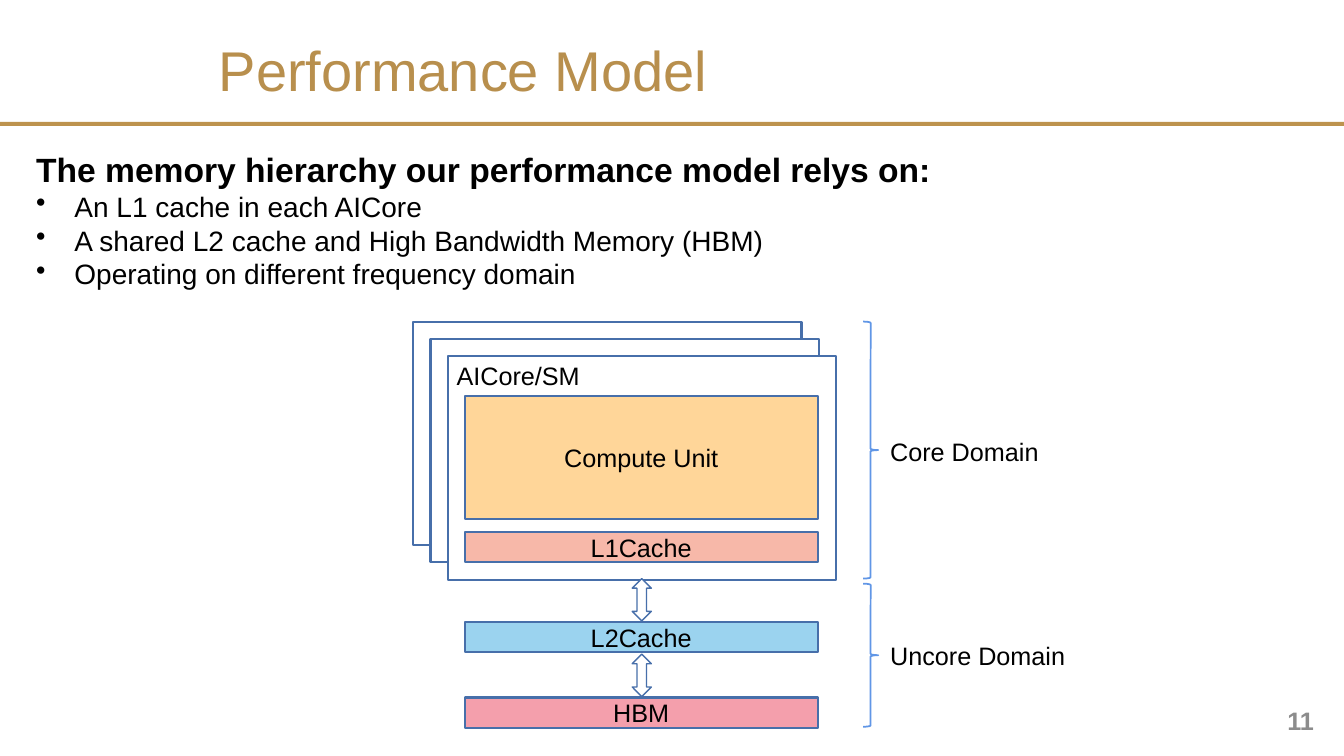
import pptx
import pptx.util
import pptx.dml.color
import pptx.enum.shapes
import pptx.enum.text
import pptx.oxml.ns
import lxml.etree

Inches = pptx.util.Inches
Pt = pptx.util.Pt
SHAPE = pptx.enum.shapes.MSO_SHAPE
ALIGN = pptx.enum.text.PP_ALIGN
ANCHOR = pptx.enum.text.MSO_ANCHOR

COLORS = {
    "rule": "BD934E", "title": "B88F4D", "text": "000000", "page": "8C8C8C",
    "outline": "476FAA", "brace": "6096E6", "white": "FFFFFF",
    "compute": "FFD699", "l1": "F7B8A9", "l2": "9BD3EF", "hbm": "F49FAC",
}


def rgb(name):
    """Return the palette colour called name."""
    return pptx.dml.color.RGBColor.from_string(COLORS[name])


def style(paragraph, size, color="text", bold=False, align=ALIGN.LEFT):
    """Format a paragraph and its runs."""
    paragraph.alignment = align
    for run in paragraph.runs:
        run.font.name = "Arial"
        run.font.size = Pt(size)
        run.font.bold = bold
        run.font.color.rgb = rgb(color)


def add_bullet(paragraph, indent):
    """Give a paragraph a hanging bullet."""
    properties = paragraph._p.get_or_add_pPr()
    properties.set("marL", str(Inches(indent)))
    properties.set("indent", str(-Inches(indent)))
    bullet = lxml.etree.SubElement(properties, pptx.oxml.ns.qn("a:buChar"))
    bullet.set("char", "•")


def add_block(slide, kind, place, fill=None, line=None, width=1.5, label=""):
    """Add a preset shape with an optional fill, outline and centred label."""
    block = slide.shapes.add_shape(kind, *map(Inches, place))
    block.shadow.inherit = False
    if fill:
        block.fill.solid()
        block.fill.fore_color.rgb = rgb(fill)
    else:
        block.fill.background()
    if line:
        block.line.color.rgb = rgb(line)
        block.line.width = Pt(width)
    else:
        block.line.fill.background()
    if label:
        block.text_frame.text = label
        block.text_frame.vertical_anchor = ANCHOR.MIDDLE
        style(block.text_frame.paragraphs[0], 18, align=ALIGN.CENTER)


def add_text(slide, place, text, wrap=False):
    """Add a text box and return its text frame."""
    frame = slide.shapes.add_textbox(*map(Inches, place)).text_frame
    frame.word_wrap = wrap
    frame.text = text
    return frame


def add_label(slide, place, text):
    """Add a one-line diagram label."""
    style(add_text(slide, place, text).paragraphs[0], 18)


def add_title(slide):
    """Place the title and the rule below it."""
    add_block(slide, SHAPE.RECTANGLE, (0, 1.21, 13.33, 0.04), "rule")
    title = slide.shapes.title
    title.left, title.top, title.width, title.height = map(Inches, (2.07, 0.3, 6.82, 0.77))
    title.text_frame.text = "Performance Model"
    title.text_frame.vertical_anchor = ANCHOR.MIDDLE
    style(title.text_frame.paragraphs[0], 40, "title")


def add_summary(slide):
    """Add the heading and bullets above the diagram."""
    points = [
        "An L1 cache in each AICore",
        "A shared L2 cache and High Bandwidth Memory (HBM)",
        "Operating on different frequency domain",
    ]
    heading = "The memory hierarchy our performance model relys on:"
    frame = add_text(slide, (0.26, 1.43, 10.79, 1.51), "\n".join([heading] + points), True)
    style(frame.paragraphs[0], 24, bold=True)
    for point in frame.paragraphs[1:]:
        add_bullet(point, 0.38)
        style(point, 20)


def add_hierarchy(slide):
    """Draw the stacked cores, the memories and the arrows between them."""
    for depth, fill in enumerate((None, "white", "white")):
        offset = depth * 0.17
        add_block(slide, SHAPE.RECTANGLE, (4.1 + offset, 3.19 + offset, 3.85, 2.22), fill, "outline")
    add_label(slide, (4.43, 3.53, 1.44, 0.4), "AICore/SM")
    for label, top, height, fill in (
        ("Compute Unit", 3.93, 1.22, "compute"),
        ("L1Cache", 5.28, 0.3, "l1"),
        ("L2Cache", 6.17, 0.3, "l2"),
        ("HBM", 6.92, 0.3, "hbm"),
    ):
        add_block(slide, SHAPE.RECTANGLE, (4.61, top, 3.5, height), fill, "outline", label=label)
    for top in (5.74, 6.49):
        add_block(slide, SHAPE.UP_DOWN_ARROW, (6.27, top, 0.19, 0.42), "white", "outline", 1)


def add_domains(slide):
    """Bracket the two frequency domains and label them."""
    for label, top, height, label_top, label_width in (
        ("Core Domain", 3.19, 2.55, 4.28, 1.69),
        ("Uncore Domain", 5.79, 1.42, 6.3, 1.96),
    ):
        add_block(slide, SHAPE.RIGHT_BRACE, (8.56, top, 0.15, height), None, "brace", 1.25)
        add_label(slide, (8.73, label_top, label_width, 0.4), label)


def add_page_number(slide):
    """Add the page number at the bottom right."""
    frame = add_text(slide, (10.18, 6.97, 2.95, 0.35), "11", True)
    frame.vertical_anchor = ANCHOR.MIDDLE
    style(frame.paragraphs[0], 18, "page", True, ALIGN.RIGHT)


def main():
    """Build the slide and save it."""
    deck = pptx.Presentation()
    deck.slide_width, deck.slide_height = Inches(13.33), Inches(7.5)
    slide = deck.slides.add_slide(deck.slide_layouts[5])
    add_title(slide)
    add_summary(slide)
    add_hierarchy(slide)
    add_domains(slide)
    add_page_number(slide)
    deck.save("out.pptx")


if __name__ == "__main__":
    main()
